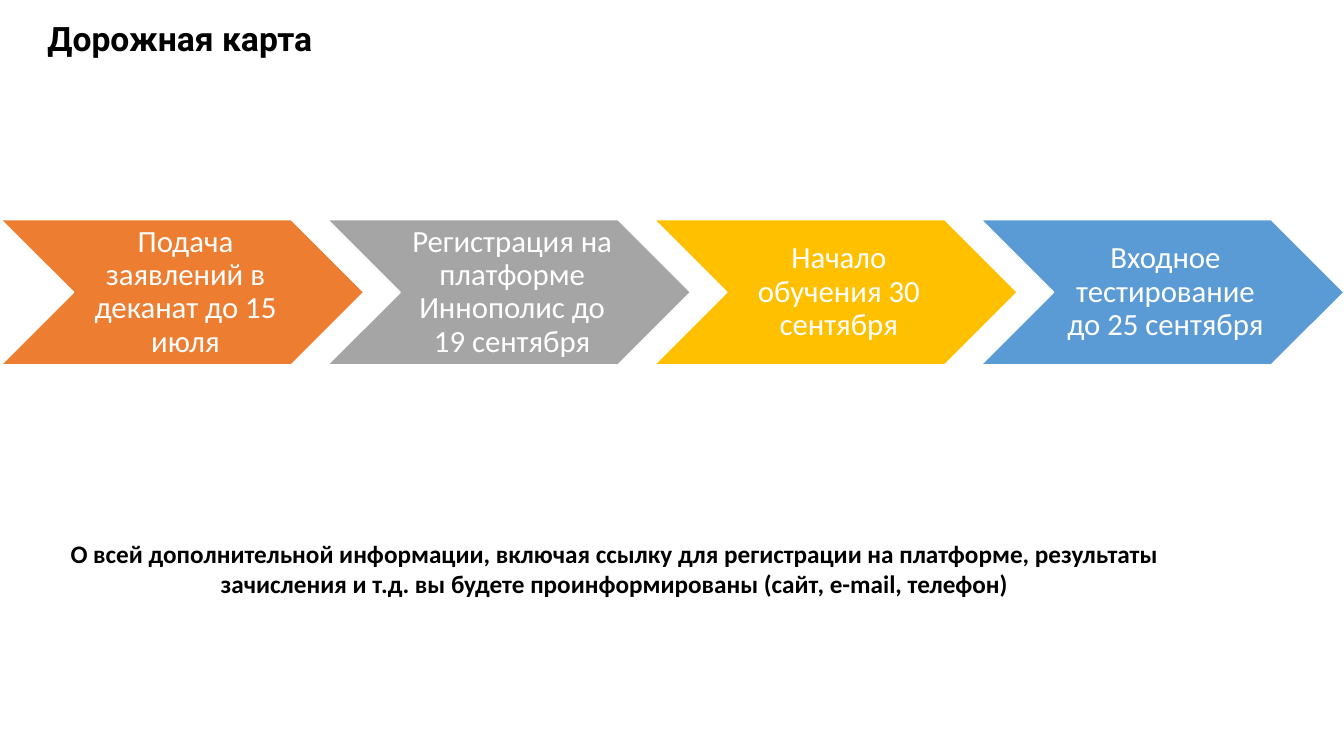
from dataclasses import dataclass

from pptx import Presentation
from pptx.dml.color import RGBColor
from pptx.enum.shapes import MSO_SHAPE
from pptx.enum.text import MSO_ANCHOR, MSO_AUTO_SIZE, PP_ALIGN
from pptx.slide import Slide
from pptx.util import Inches, Pt

CHEVRON = MSO_SHAPE.CHEVRON
TOP, MIDDLE = MSO_ANCHOR.TOP, MSO_ANCHOR.MIDDLE
LEFT, CENTER = PP_ALIGN.LEFT, PP_ALIGN.CENTER
FIT_SHAPE = MSO_AUTO_SIZE.SHAPE_TO_FIT_TEXT
BLANK_LAYOUT = 6


@dataclass(frozen=True)
class Theme:
    black: str = "000000"
    white: str = "FFFFFF"
    orange: str = "ED7D31"
    gray: str = "A5A5A5"
    gold: str = "FFC000"
    blue: str = "5B9BD5"
    heading_font: str = "Roboto"
    body_font: str = "Calibri"
    title_size: float = 24
    step_size: float = 22
    note_size: float = 18
    outline_width: float = 1


@dataclass(frozen=True)
class Box:
    left: float
    top: float
    width: float
    height: float


@dataclass(frozen=True)
class TextStyle:
    font: str
    size: float
    color: str
    bold: bool = False
    alignment: PP_ALIGN = LEFT
    anchor: MSO_ANCHOR = TOP
    line_spacing: float = 1.0
    inset: float = 0.05


@dataclass(frozen=True)
class Step:
    text: str
    fill: str
    label_height: float


THEME = Theme()
TITLE_STYLE = TextStyle(THEME.heading_font, THEME.title_size, THEME.black, bold=True)
STEP_STYLE = TextStyle(THEME.body_font, THEME.step_size, THEME.white, alignment=CENTER,
                       anchor=MIDDLE, line_spacing=0.9, inset=0.03)
NOTE_STYLE = TextStyle(THEME.body_font, THEME.note_size, THEME.black, bold=True,
                       alignment=CENTER)

TITLE_BOX = Box(0.42, 0.13, 11.35, 0.5)
NOTE_BOX = Box(0.42, 5.29, 11.35, 0.68)
FIRST_CHEVRON = Box(0.01, 2.18, 3.6, 1.44)
STEP_PITCH = 3.24
LABEL_OFFSET = 0.78
LABEL_WIDTH = 2.1

TITLE = "Дорожная карта"
NOTE = ("О всей дополнительной информации, включая ссылку для регистрации на платформе, "
        "результаты зачисления и т.д. вы будете проинформированы (сайт, e-mail, телефон)")
STEPS = [
    Step("Подача заявлений в деканат до 15 июля", THEME.orange, 1.4),
    Step("Регистрация на платформе Иннополис до 19 сентября", THEME.gray, 1.4),
    Step("Начало обучения 30 сентября", THEME.gold, 1.1),
    Step("Входное тестирование до 25 сентября", THEME.blue, 1.1),
]


def add_text(slide: Slide, box: Box, text: str, style: TextStyle) -> None:
    shape = slide.shapes.add_textbox(Inches(box.left), Inches(box.top),
                                     Inches(box.width), Inches(box.height))
    frame = shape.text_frame
    frame.text = text
    frame.word_wrap = True
    frame.auto_size = FIT_SHAPE
    frame.vertical_anchor = style.anchor
    frame.margin_left = frame.margin_right = Inches(style.inset)
    frame.margin_top = frame.margin_bottom = Inches(style.inset)
    paragraph = frame.paragraphs[0]
    paragraph.alignment = style.alignment
    paragraph.line_spacing = style.line_spacing
    font = paragraph.runs[0].font
    font.name = style.font
    font.size = Pt(style.size)
    font.bold = style.bold
    font.color.rgb = RGBColor.from_string(style.color)


def add_step(slide: Slide, index: int, step: Step) -> None:
    left = FIRST_CHEVRON.left + index * STEP_PITCH
    shape = slide.shapes.add_shape(CHEVRON, Inches(left), Inches(FIRST_CHEVRON.top),
                                   Inches(FIRST_CHEVRON.width),
                                   Inches(FIRST_CHEVRON.height))
    shape.adjustments[0] = 0.5
    shape.shadow.inherit = False
    shape.fill.solid()
    shape.fill.fore_color.rgb = RGBColor.from_string(step.fill)
    shape.line.color.rgb = RGBColor.from_string(THEME.white)
    shape.line.width = Pt(THEME.outline_width)
    label_top = FIRST_CHEVRON.top + (FIRST_CHEVRON.height - step.label_height) / 2
    label_box = Box(left + LABEL_OFFSET, label_top, LABEL_WIDTH, step.label_height)
    add_text(slide, label_box, step.text, STEP_STYLE)


def main() -> None:
    presentation = Presentation()
    presentation.slide_width = Inches(13.33)
    presentation.slide_height = Inches(7.5)
    slide = presentation.slides.add_slide(presentation.slide_layouts[BLANK_LAYOUT])
    add_text(slide, TITLE_BOX, TITLE, TITLE_STYLE)
    for index, step in enumerate(STEPS):
        add_step(slide, index, step)
    add_text(slide, NOTE_BOX, NOTE, NOTE_STYLE)
    presentation.save("out.pptx")


if __name__ == "__main__":
    main()
